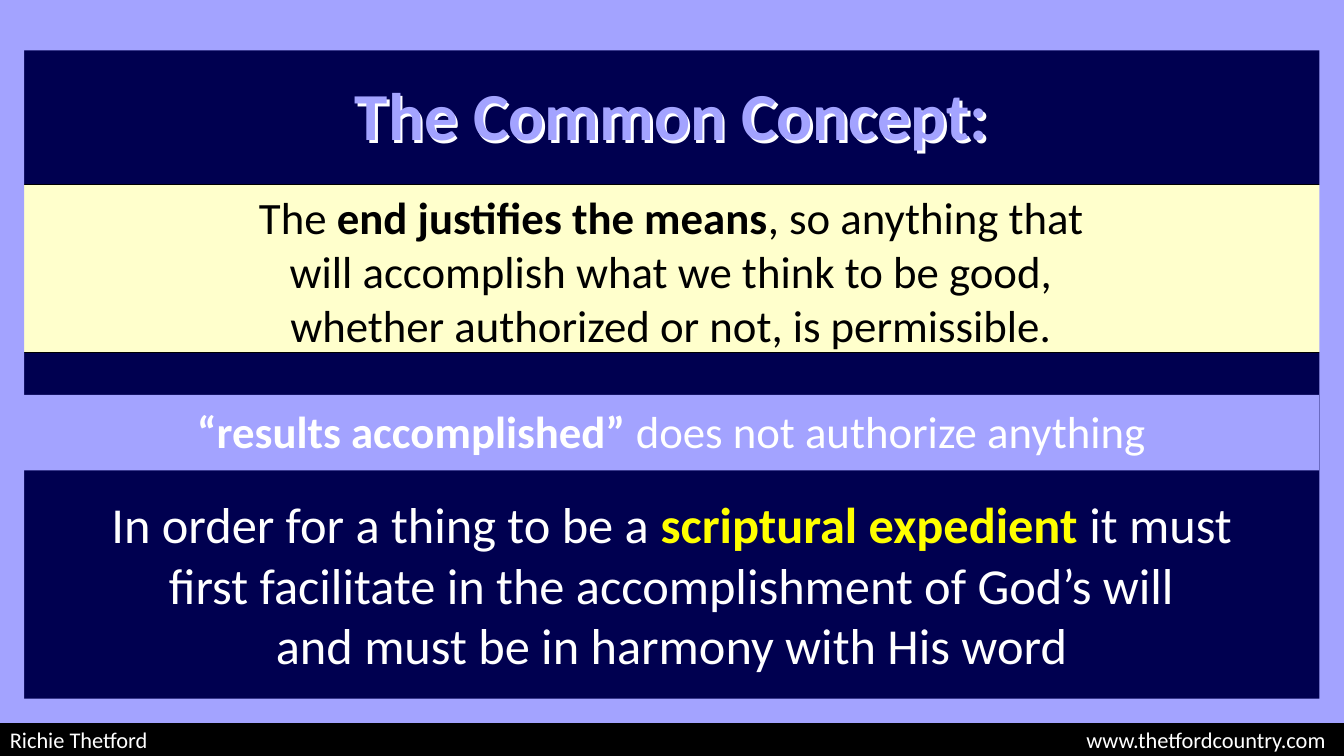
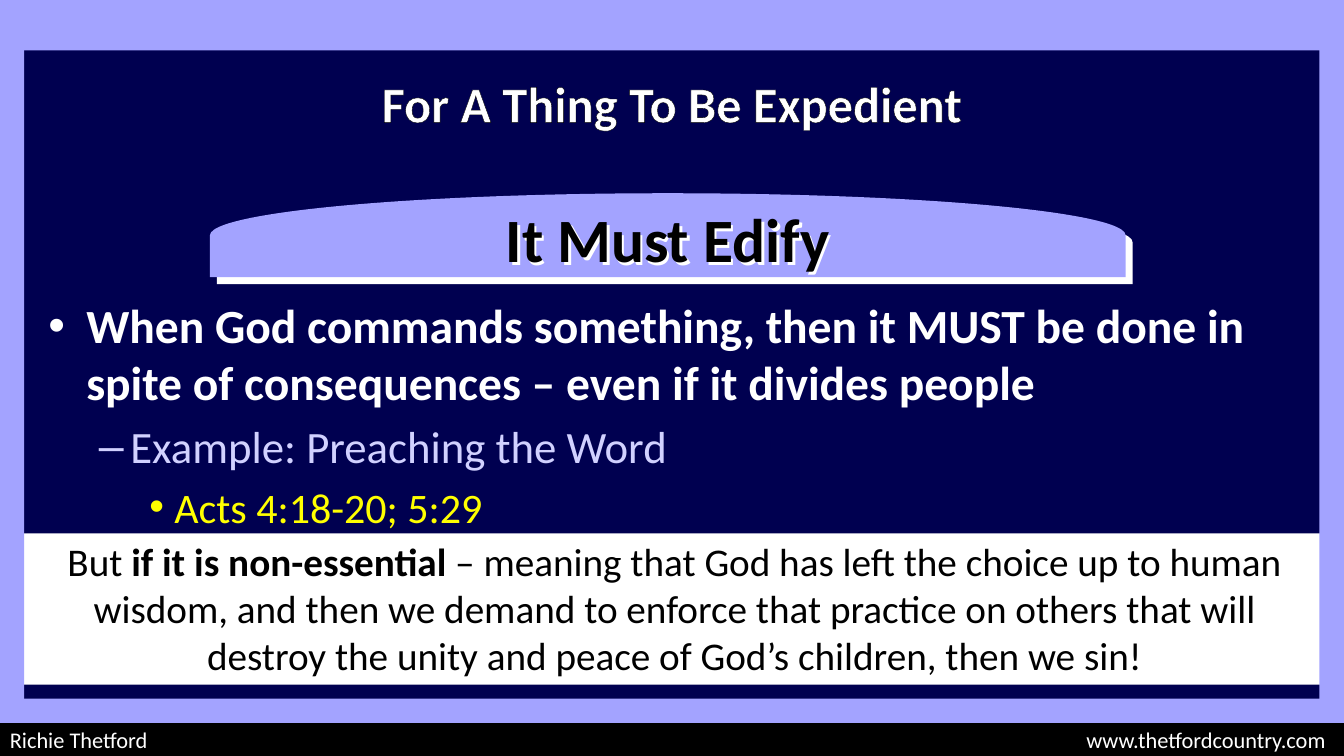
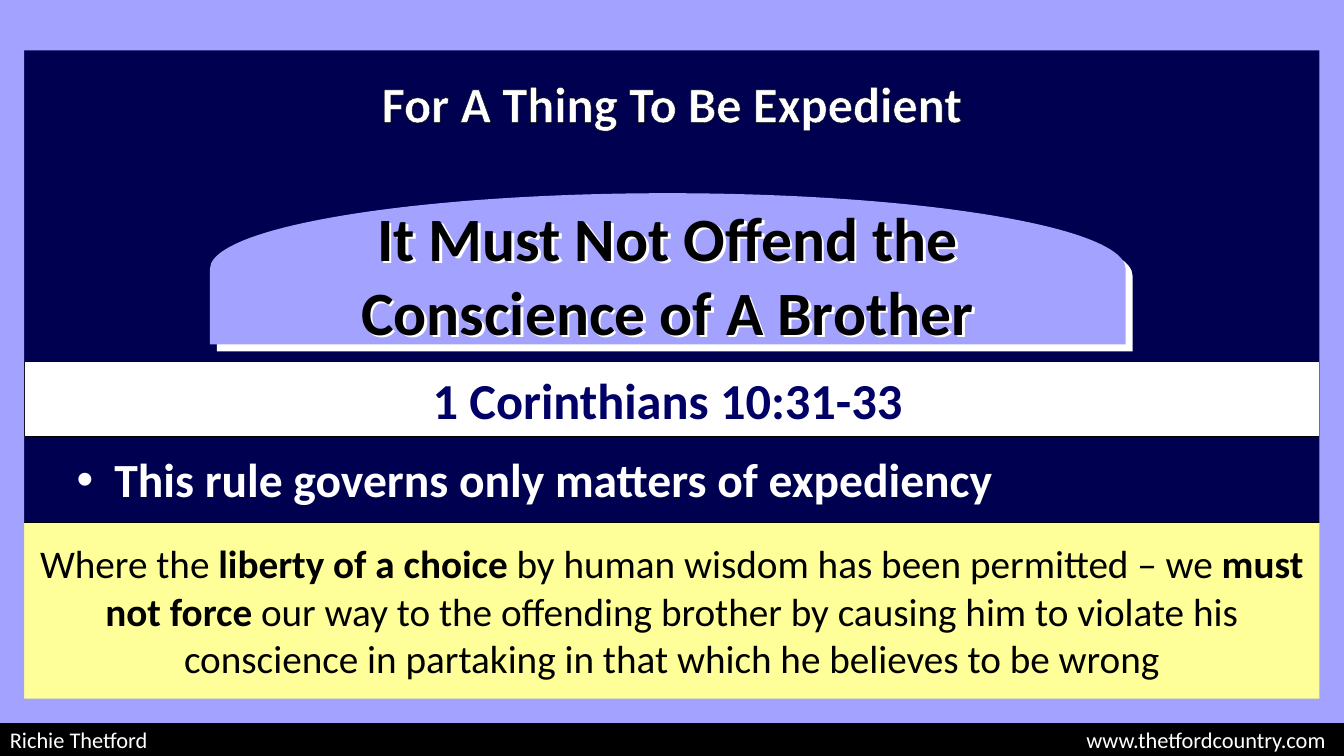
"""Build three slides on expedience with a shared frame and footer."""
import pptx
import pptx.util
import pptx.dml.color
import pptx.enum.shapes
import pptx.enum.text
import pptx.oxml
import pptx.oxml.ns

Pt = pptx.util.Pt
RGB = pptx.dml.color.RGBColor
KIND = pptx.enum.shapes.MSO_SHAPE
ALIGN = pptx.enum.text.PP_ALIGN
ANCHOR = pptx.enum.text.MSO_ANCHOR

NAVY = RGB(0x00, 0x00, 0x50)
INK = RGB(0x00, 0x00, 0x66)
LILAC = RGB(0xA3, 0xA3, 0xFF)
PALE = RGB(0xD1, 0xD1, 0xFF)
CREAM = RGB(0xFF, 0xFF, 0xCC)
LEMON = RGB(0xFF, 0xFF, 0x99)
YELLOW = RGB(0xFF, 0xFF, 0x00)
WHITE = RGB(0xFF, 0xFF, 0xFF)
BLACK = RGB(0x00, 0x00, 0x00)
FONT = "Calibri"
SPACE = 'xmlns:a="http://schemas.openxmlformats.org/drawingml/2006/main"'


def band(slide, at, color, edge=False, kind=KIND.RECTANGLE):
    shape = slide.shapes.add_shape(kind, *map(Pt, at))
    shape.shadow.inherit = False
    shape.fill.solid()
    shape.fill.fore_color.rgb = color
    if edge:
        shape.line.color.rgb = BLACK
        shape.line.width = Pt(0.75)
    else:
        shape.line.fill.background()
    return shape


def write(shape, at, text, size, color, bold=False, accent=None, align=ALIGN.CENTER):
    shape.left, shape.top, shape.width, shape.height = map(Pt, at)
    frame = shape.text_frame
    frame.word_wrap = True
    frame.auto_size = pptx.enum.text.MSO_AUTO_SIZE.NONE
    para = frame.paragraphs[0]
    para.alignment = align
    for part, piece in enumerate(text.split("*")):
        strong = part % 2 == 1
        for row, line in enumerate(piece.split("\n")):
            if row:
                para.add_line_break()
            if line:
                run = para.add_run()
                run.text = line
                run.font.name = FONT
                run.font.size = Pt(size)
                run.font.bold = bold or strong
                run.font.color.rgb = accent if strong and accent else color
    return shape


deck = pptx.Presentation()
deck.slide_width, deck.slide_height = Pt(960), Pt(540)
ground = deck.slide_master.background.fill
ground.solid()
ground.fore_color.rgb = NAVY
glows = []

slide = deck.slides.add_slide(deck.slide_layouts[5])
title = write(slide.shapes.title, (138, 36, 684, 90), "The Common Concept:", 48, LILAC, True)
glows.append((title, 2.8))
band(slide, (11.5, 132, 935, 120), CREAM, True)
band(slide, (7, 282, 935, 54), LILAC)
for at, text, size, color, accent in (
    ((48, 132, 863, 124),
     "The *end justifies the means*, so anything that\n"
     "will accomplish what we think to be good,\n"
     "whether authorized or not, is permissible.", 32, BLACK, None),
    ((17.3, 284.5, 925, 46),
     "*“results accomplished”* does not authorize anything", 32, WHITE, None),
    ((17.3, 349, 925, 138),
     "In order for a thing to be a *scriptural expedient* it must\n"
     "first facilitate in the accomplishment of God’s will\n"
     "and must be in harmony with His word", 36, WHITE, YELLOW),
):
    write(slide.shapes.add_textbox(0, 0, 0, 0), at, text, size, color, accent=accent)

levels = ((34, WHITE, True), (32, PALE, False), (30, YELLOW, False))
rules = (
    ("It Must Edify", 60, (150, 140, 654, 60), (27.4, 208, 915, 204),
     "When God commands something, then it MUST be done in spite of consequences"
     " – even if it divides people\nExample: Preaching the Word\nActs 4:18-20; 5:29",
     (11.5, 381, 935, 108), WHITE, False, (26, 380, 911.5, 109),
     "But *if it is non-essential* – meaning that God has left the choice up to human "
     "wisdom, and then we demand to enforce that practice on others that will "
     "destroy the unity and peace of God’s children, then we sin!"),
    ("It Must Not Offend the\nConscience of A Brother", 108, (150, 139, 654, 114),
     (47.5, 318, 865, 48), "This rule governs only matters of expediency",
     (11.5, 373.5, 937.5, 126), LEMON, True, (17.3, 382, 925, 109),
     "Where the *liberty of a choice *by human wisdom has been permitted – we "
     "*must not force *our way to the offending brother by causing him to violate his "
     "conscience in partaking in that which he believes to be wrong"),
)
for head, tall, place, spot, points, strip, color, edge, area, note in rules:
    slide = deck.slides.add_slide(deck.slide_layouts[1])
    title = write(slide.shapes.title, (29, 48, 902, 132), "For A Thing To Be Expedient",
                  36, WHITE, True)
    title.text_frame.vertical_anchor = ANCHOR.TOP
    rim = f'<a:ln {SPACE} w="9525"><a:solidFill><a:srgbClr val="{BLACK}"/></a:solidFill></a:ln>'
    run = title.text_frame.paragraphs[0].runs[0]
    run._r.get_or_add_rPr().insert(0, pptx.oxml.parse_xml(rim))

    body = slide.placeholders[1]
    body.left, body.top, body.width, body.height = map(Pt, spot)
    body.text_frame.text = points
    body.text_frame.auto_size = pptx.enum.text.MSO_AUTO_SIZE.NONE
    for level, para in enumerate(body.text_frame.paragraphs):
        para.level = level
        para.space_before = Pt(6)
        font = para.runs[0].font
        size, tint, font.bold = levels[level]
        font.name, font.size, font.color.rgb = FONT, Pt(size), tint

    dome = band(slide, (477 - tall / 2, 138 + tall / 2 - 327, tall, 654), LILAC,
                kind=KIND.FLOWCHART_DELAY)
    dome.rotation = 270
    label = write(slide.shapes.add_textbox(0, 0, 0, 0), place, head, 44, BLACK, True)
    glows += [(dome, 7.1), (label, 2.8)]
    band(slide, strip, color, edge)
    write(slide.shapes.add_textbox(0, 0, 0, 0), area, note, 28, BLACK)

band(slide, (17.3, 258, 925, 54), WHITE, True)
write(slide.shapes.add_textbox(0, 0, 0, 0), (150, 260, 654, 51),
      "1 Corinthians 10:31-33", 36, INK, True)

for shape, shift in glows:
    shape.shadow.inherit = False
    glow = (f'<a:outerShdw {SPACE} dist="{Pt(shift)}" dir="2700000" algn="ctr" '
            f'rotWithShape="0"><a:srgbClr val="{WHITE}"/></a:outerShdw>')
    effect = shape._element.spPr.find(pptx.oxml.ns.qn("a:effectLst"))
    effect.append(pptx.oxml.parse_xml(glow))

for slide in deck.slides:
    for at in ((0, 0, 17.3, 540), (942.5, 0, 17.5, 540),
               (17.3, 0, 930, 36), (11.5, 499, 940, 18)):
        band(slide, at, LILAC)
    band(slide, (0, 516.5, 960, 23.5), BLACK)
    for left, text, align in ((0, "Richie Thetford", ALIGN.LEFT),
                              (480, "www.thetfordcountry.com", ALIGN.RIGHT)):
        foot = write(slide.shapes.add_textbox(0, 0, 0, 0), (left, 516.5, 474, 26.5),
                     text, 16, WHITE, align=align)
        foot.text_frame.vertical_anchor = ANCHOR.MIDDLE
        foot.height = Pt(23.5)

deck.save("out.pptx")
